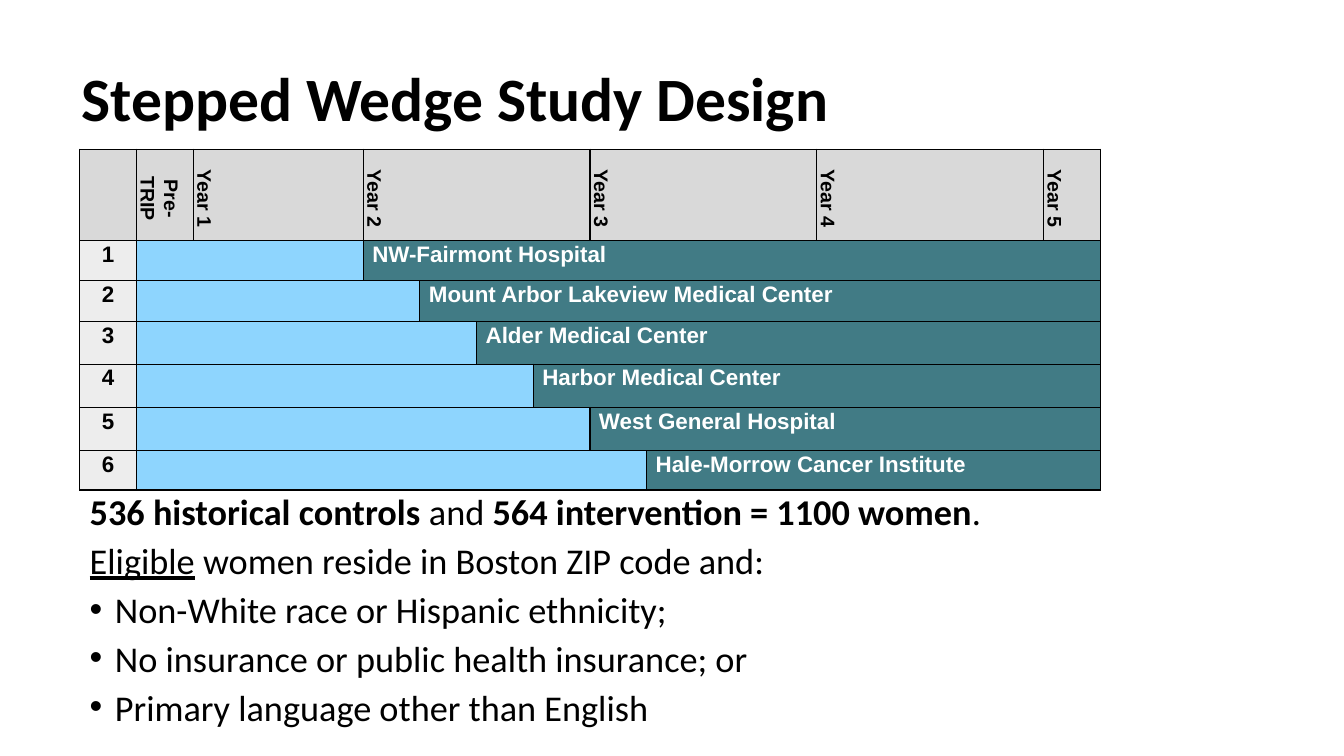
from lxml.etree import SubElement
from pptx import Presentation
from pptx.dml.color import RGBColor
from pptx.enum.text import MSO_ANCHOR, PP_ALIGN
from pptx.oxml.ns import qn
from pptx.util import Pt

COLORS = {
    "black": "000000",
    "white": "FFFFFF",
    "header": "D9D9D9",
    "number": "EDEDED",
    "control": "8ED5FE",
    "intervention": "417B85",
}
QUARTER = 40.5
COLUMN_QUARTERS = [1, 1, 3, 1, 1, 1, 1, 1, 3, 4, 1]
ROW_HEIGHTS = [57, 29, 29, 30.5, 31, 31, 28]
# Label, first column, last column
PERIODS = [
    ("", 0, 0),
    ("Pre-TRIP", 1, 1),
    ("Year 1", 2, 2),
    ("Year 2", 3, 6),
    ("Year 3", 7, 8),
    ("Year 4", 9, 9),
    ("Year 5", 10, 10),
]
HOSPITALS = [
    "NW-Fairmont Hospital",
    "Mount Arbor Lakeview Medical Center",
    "Alder Medical Center",
    "Harbor Medical Center",
    "West General Hospital",
    "Hale-Morrow Cancer Institute",
]
CRITERIA = [
    "Non-White race or Hispanic ethnicity;",
    "No insurance or public health insurance; or",
    "Primary language other than English",
]


def write(paragraph, text, size=25.9, font="Calibri", color="black",
          bold=False, underline=False, align=PP_ALIGN.LEFT, spacing=0.8, before=0):
    """Append a run to the paragraph and format both."""
    paragraph.alignment = align
    paragraph.line_spacing = spacing
    paragraph.space_before = Pt(before)
    run = paragraph.add_run()
    run.text = text
    run.font.size = Pt(size)
    run.font.name = font
    run.font.bold = bold
    run.font.underline = underline
    run.font.color.rgb = RGBColor.from_string(COLORS[color])


def add_borders(cell):
    properties = cell._tc.get_or_add_tcPr()
    for position, side in enumerate(("a:lnL", "a:lnR", "a:lnT", "a:lnB")):
        line = SubElement(properties, qn(side), w=str(Pt(1)))
        fill = SubElement(line, qn("a:solidFill"))
        SubElement(fill, qn("a:srgbClr"), val=COLORS["black"])
        properties.insert(position, line)


def fill_cells(table, row, first, last, fill, text="", left=4.3, **text_format):
    """Merge a span of one row, colour it and write its text."""
    for column in range(first, last + 1):
        cell = table.cell(row, column)
        cell.fill.solid()
        cell.fill.fore_color.rgb = RGBColor.from_string(COLORS[fill])
        add_borders(cell)
    cell = table.cell(row, first)
    if last > first:
        cell.merge(table.cell(row, last))
    cell.margin_left, cell.margin_right = Pt(left), Pt(4.3)
    cell.margin_top = cell.margin_bottom = 0
    if text:
        write(cell.text_frame.paragraphs[0], text, font="Arial", bold=True,
              spacing=1.07, **text_format)
    return cell


def add_title(slide, text):
    title = slide.shapes.title
    title.left, title.top, title.width, title.height = Pt(51), Pt(49), Pt(636.5), Pt(47.5)
    title.text_frame.vertical_anchor = MSO_ANCHOR.MIDDLE
    write(title.text_frame.paragraphs[0], text, size=44, bold=True, spacing=0.9)


def add_schedule(slide):
    frame = slide.shapes.add_table(
        len(ROW_HEIGHTS), len(COLUMN_QUARTERS), Pt(57), Pt(106.5),
        Pt(QUARTER * sum(COLUMN_QUARTERS)), Pt(sum(ROW_HEIGHTS)))
    table = frame.table
    table.first_row = table.horz_banding = False
    for column, quarters in zip(table.columns, COLUMN_QUARTERS):
        column.width = Pt(QUARTER * quarters)
    for row, height in zip(table.rows, ROW_HEIGHTS):
        row.height = Pt(height)

    for label, first, last in PERIODS:
        cell = fill_cells(table, 0, first, last, "header", label,
                          size=14, align=PP_ALIGN.CENTER)
        if label:
            cell.vertical_anchor = MSO_ANCHOR.MIDDLE
            cell._tc.get_or_add_tcPr().set("vert", "vert")
            properties = cell.text_frame.paragraphs[0]._p.get_or_add_pPr()
            properties.set("marL", str(Pt(5.75)))

    last_column = len(COLUMN_QUARTERS) - 1
    for step, hospital in enumerate(HOSPITALS, start=1):
        start = step + 2
        fill_cells(table, step, 0, 0, "number", str(step), size=16, align=PP_ALIGN.CENTER)
        fill_cells(table, step, 1, start - 1, "control")
        fill_cells(table, step, start, last_column, "intervention", hospital,
                   left=6.5, size=16, color="white")


def add_bullet(paragraph):
    properties = paragraph._p.get_or_add_pPr()
    properties.set("marL", str(Pt(18)))
    properties.set("indent", str(-Pt(18)))
    SubElement(properties, qn("a:buFont"), typeface="Arial")
    SubElement(properties, qn("a:buChar"), char="•")


def add_eligibility(slide):
    box = slide.shapes.add_textbox(Pt(57), Pt(352), Pt(882.5), Pt(178.5))
    frame = box.text_frame
    frame.word_wrap = True
    counts = frame.paragraphs[0]
    write(counts, "536 historical controls ", bold=True, before=10)
    write(counts, "and ", before=10)
    write(counts, "564 intervention = 1100 women", bold=True, before=10)
    write(counts, ".", before=10)
    eligible = frame.add_paragraph()
    write(eligible, "Eligible", underline=True, before=10)
    write(eligible, " women reside in Boston ZIP code and:", before=10)
    for criterion in CRITERIA:
        paragraph = frame.add_paragraph()
        write(paragraph, criterion, before=10)
        add_bullet(paragraph)


def main():
    presentation = Presentation()
    presentation.slide_width, presentation.slide_height = Pt(960), Pt(540)
    slide = presentation.slides.add_slide(presentation.slide_layouts[5])
    add_title(slide, "Stepped Wedge Study Design")
    add_schedule(slide)
    add_eligibility(slide)
    presentation.save("out.pptx")


if __name__ == "__main__":
    main()
